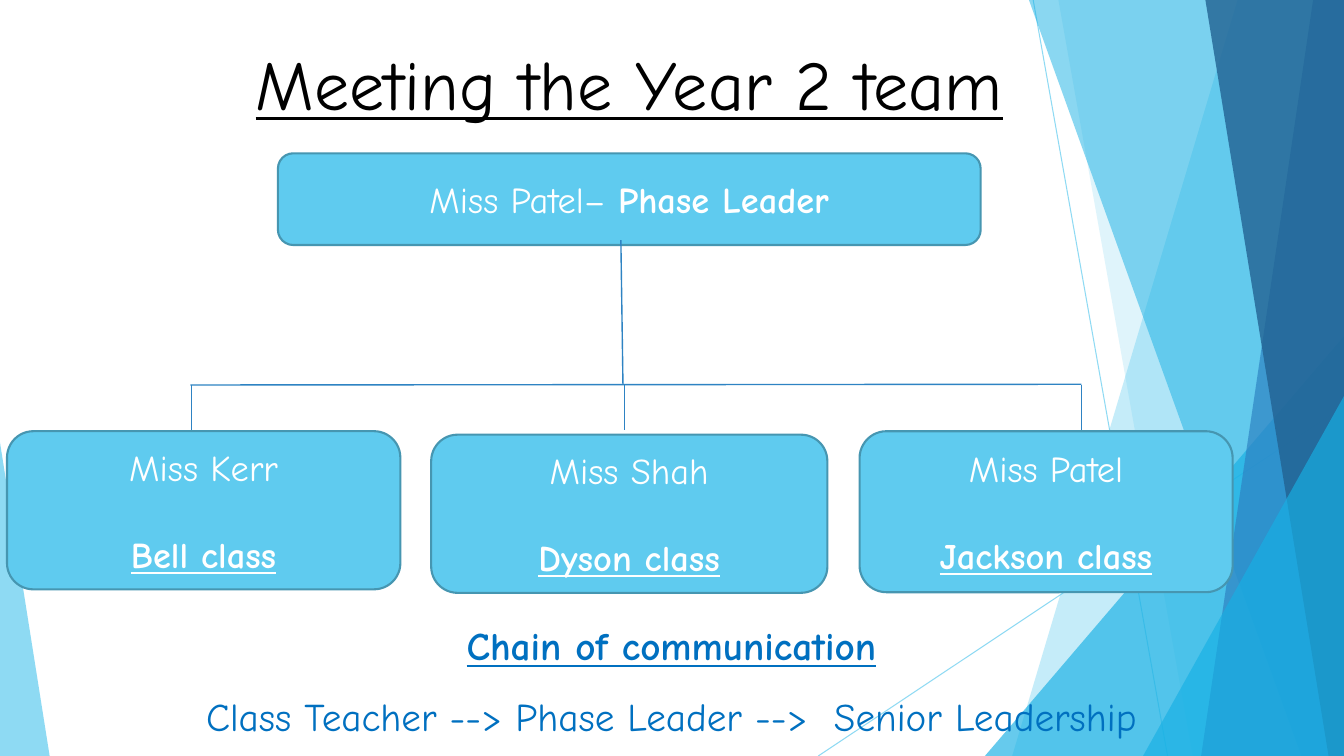
"""Build the Year 2 team slide: an organisation chart on a faceted background."""
from pptx import Presentation
from pptx.dml.color import RGBColor
from pptx.enum import shapes, text
from pptx.oxml.ns import qn
from pptx.util import Pt
from lxml import etree

WIDTH, HEIGHT = 960, 540
SKY, CYAN, BLUE, NAVY = "5FCBEF", "17B0E4", "2E83C3", "226292"
FONT = "Comic Neue"


def paint(fill, color, opacity=100):
    fill.solid()
    fill.fore_color.rgb = RGBColor.from_string(color)
    if opacity < 100:
        srgb = fill._xPr.find(".//" + qn("a:srgbClr"))
        etree.SubElement(srgb, qn("a:alpha"), val=str(opacity * 1000))


def draw_line(x1, y1, x2, y2, color, weight, opacity=100):
    line = slide.shapes.add_connector(
        shapes.MSO_CONNECTOR.STRAIGHT, Pt(x1), Pt(y1), Pt(x2), Pt(y2))
    line.line.width = Pt(weight)
    paint(line.line.fill, color, opacity)
    etree.SubElement(line._element.spPr, qn("a:effectLst"))


deck = Presentation()
deck.slide_width, deck.slide_height = Pt(WIDTH), Pt(HEIGHT)
slide = deck.slides.add_slide(deck.slide_layouts[5])

draw_line(738, 0, 834, HEIGHT, SKY, 0.75, 70)
draw_line(WIDTH, 290, 584.5, HEIGHT, SKY, 0.75, 70)

# Each facet runs from its top x to its bottom x; a triangle has a top y instead.
facets = [
    ("band", 884, 723, SKY, 36),
    ("band", 756, 852, SKY, 20),
    ("triangle", 703.5, 240, CYAN, 66),
    ("band", 735, 929.5, CYAN, 50),
    ("band", 938, 858, BLUE, 70),
    ("band", 861, 949, NAVY, 80),
    ("triangle", 816.5, 283, CYAN, 66),
    ("left triangle", 35.5, 316, SKY, 70),
]
for kind, x, end, color, opacity in facets:
    if kind == "band":
        outline = slide.shapes.build_freeform(Pt(x), 0)
        outline.add_line_segments(
            [(Pt(WIDTH), 0), (Pt(WIDTH), Pt(HEIGHT)), (Pt(end), Pt(HEIGHT))])
        facet = outline.convert_to_shape()
    else:
        on_left = kind == "left triangle"
        left, right = (0, x) if on_left else (x, WIDTH)
        facet = slide.shapes.add_shape(
            shapes.MSO_SHAPE.ISOSCELES_TRIANGLE,
            Pt(left), Pt(end), Pt(right - left), Pt(HEIGHT - end))
        facet.adjustments[0] = 0 if on_left else 1
    facet.shadow.inherit = False
    paint(facet.fill, color, opacity)
    facet.line.fill.background()

heading = slide.shapes.title
heading.left, heading.top, heading.width, heading.height = Pt(111), Pt(25), Pt(677), Pt(104)
heading.text_frame.text = "Meeting the Year 2 team"
heading.text_frame.vertical_anchor = text.MSO_ANCHOR.TOP
heading.text_frame.paragraphs[0].alignment = text.PP_ALIGN.CENTER
heading_font = heading.text_frame.paragraphs[0].runs[0].font
heading_font.name, heading_font.size, heading_font.underline = FONT, Pt(50), True
paint(heading_font.fill, "000000")

BRANCH = 275
draw_line(136, BRANCH, 772.5, 274.5, BLUE, 1)

team = [
    ((5, 308, 281, 113), "Miss Kerr", "Bell class", 137),
    ((308, 310.5, 283, 113), "Miss Shah", "Dyson class", 446),
    ((614, 308, 266.5, 115), "Miss Patel", "Jackson class", 772.5),
    ((198.5, 109.5, 502, 65.5), "Miss Patel– ", "Phase Leader", None),
]
for bounds, person, role, drop in team:
    card = slide.shapes.add_shape(
        shapes.MSO_SHAPE.ROUNDED_RECTANGLE, *[Pt(length) for length in bounds])
    card.shadow.inherit = False
    paint(card.fill, SKY)
    paint(card.line.fill, "4696B1")
    card.line.width = Pt(1.5)
    frame = card.text_frame
    frame.vertical_anchor = text.MSO_ANCHOR.MIDDLE
    frame.text = person
    name_line = frame.paragraphs[0]
    role_line = frame.add_paragraph() if drop else name_line
    role_run = role_line.add_run()
    role_run.text = role
    role_run.font.bold = True
    if drop:
        name_line.space_after = Pt(31)
        role_run.font.underline = True
        draw_line(drop, BRANCH, drop, 307, BLUE, 1)
    for paragraph in frame.paragraphs:
        paragraph.alignment = text.PP_ALIGN.CENTER
        for run in paragraph.runs:
            run.font.name, run.font.size = FONT, Pt(26)
            paint(run.font.fill, "FFFFFF")
draw_line(443.5, 171.5, 445, BRANCH, BLUE, 1)

chain = slide.shapes.add_textbox(Pt(24), Pt(423.5), Pt(911), Pt(104)).text_frame
chain.word_wrap = True
chain.text = "Chain of communication\nClass Teacher --> Phase Leader -->  Senior Leadership"
for paragraph in chain.paragraphs:
    paragraph.alignment = text.PP_ALIGN.CENTER
    paragraph.line_spacing = 1.5
    font = paragraph.runs[0].font
    font.name, font.size = FONT, Pt(28)
    paint(font.fill, "0070C0")
chain_font = chain.paragraphs[0].runs[0].font
chain_font.bold = chain_font.underline = True

deck.save("out.pptx")
